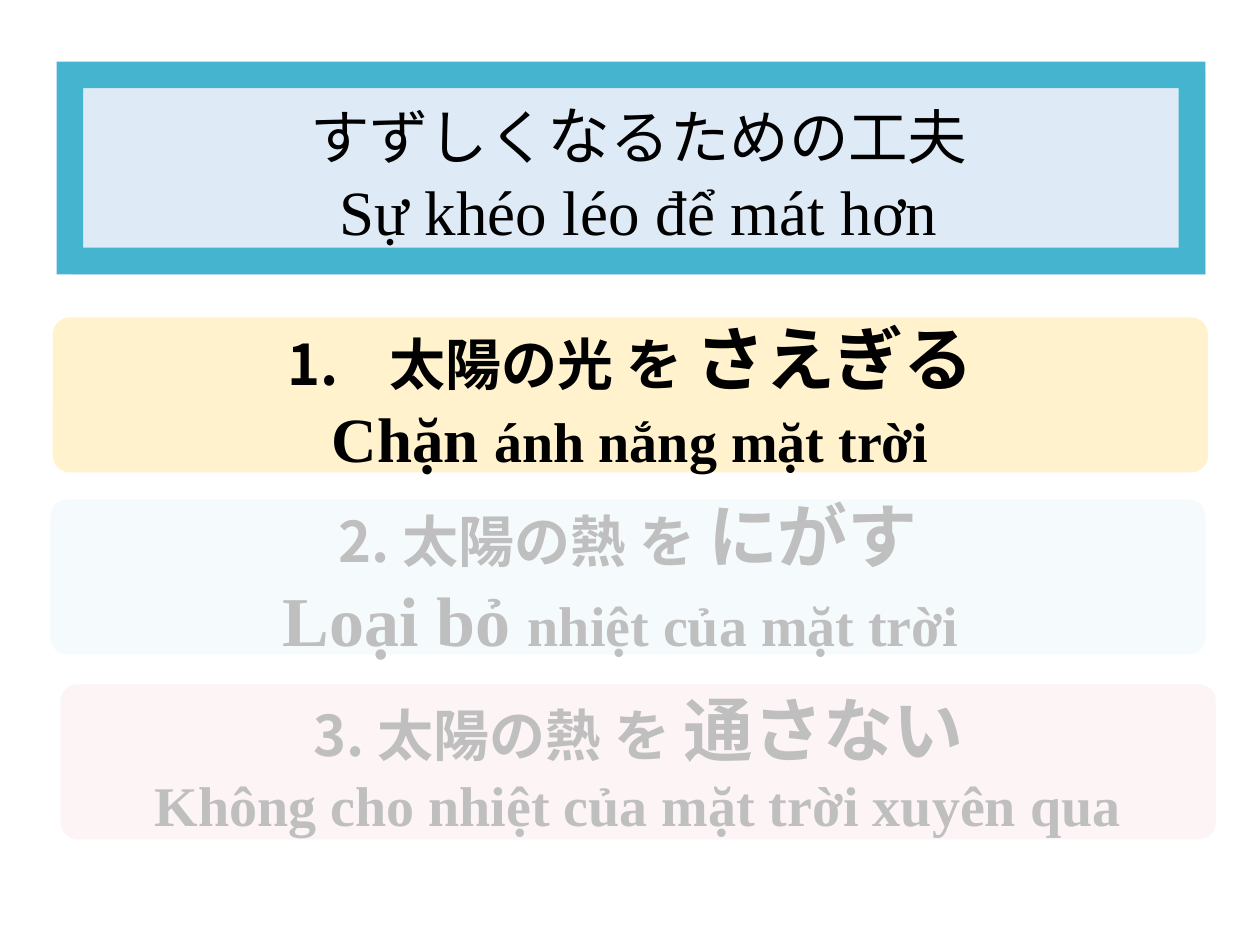
import pptx
import pptx.util
import pptx.dml.color
import pptx.enum.shapes
import pptx.enum.text
import pptx.oxml.ns
from lxml import etree

Pt = pptx.util.Pt
SHAPE = pptx.enum.shapes.MSO_SHAPE
CENTER = pptx.enum.text.PP_ALIGN.CENTER
MIDDLE = pptx.enum.text.MSO_ANCHOR.MIDDLE
qn = pptx.oxml.ns.qn

COLORS = {
    "title": "DEEBF7", "frame": "45B5CF", "text": "000000", "veil": "FFFFFF",
    "block": "FFF2CC", "release": "DAF0F5", "insulate": "F4D4D8",
}
JAPANESE = "Noto Sans CJK JP"
VIETNAMESE = "Times New Roman"


def add_box(kind, left, top, width, height, color):
    shape = slide.shapes.add_shape(kind, Pt(left), Pt(top), Pt(width), Pt(height))
    shape.shadow.inherit = False
    shape.fill.solid()
    shape.fill.fore_color.rgb = pptx.dml.color.RGBColor.from_string(COLORS[color])
    shape.line.fill.background()
    return shape


def write_line(paragraph, runs, font_name, bold):
    paragraph.alignment = CENTER
    paragraph.font.name = font_name
    paragraph.font.bold = bold
    paragraph.font.color.rgb = pptx.dml.color.RGBColor.from_string(COLORS["text"])
    for text, size in runs:
        run = paragraph.add_run()
        run.text = text
        run.font.name = font_name
        run.font.size = Pt(size)
        east_asian = etree.SubElement(run.font._element, qn("a:ea"))
        east_asian.set("typeface", JAPANESE)


presentation = pptx.Presentation()
presentation.slide_width = Pt(720)
presentation.slide_height = Pt(540)
slide = presentation.slides.add_slide(presentation.slide_layouts[5])

# Title with its frame
title = slide.shapes.title
title.left, title.top, title.width, title.height = Pt(41), Pt(40.3), Pt(648), Pt(116.6)
title.fill.solid()
title.fill.fore_color.rgb = pptx.dml.color.RGBColor.from_string(COLORS["title"])
title_frame = title.text_frame
title_frame.auto_size = pptx.enum.text.MSO_AUTO_SIZE.NONE
title_frame.word_wrap = False
title_frame.vertical_anchor = MIDDLE
write_line(title_frame.paragraphs[0],
           [("すずしく", 34), ("な", 36), ("るための工夫", 34)], VIETNAMESE, False)
write_line(title_frame.add_paragraph(), [("Sự khéo léo để mát hơn", 36)], VIETNAMESE, False)
add_box(SHAPE.FRAME, 32.4, 35.2, 656.4, 121.6, "frame")

# Cards: left, top, colour, numbered, Japanese line, Vietnamese line
cards = [
    (30.2, 181.4, "block", True, [("太陽の光 を ", 32), ("さえぎる", 40)],
     [("Chặn ", 36), ("ánh nắng mặt trời", 32)]),
    (34.6, 391, "insulate", False, [("3. 太陽の熱 を ", 32), ("通さない", 40)],
     [("Không cho nhiệt của mặt trời xuyên qua", 32)]),
    (28.8, 285.4, "release", False, [("2. 太陽の熱 を ", 32), ("にがす", 40)],
     [("Loại bỏ ", 40), ("nhiệt của mặt trời ", 32)]),
]
for left, top, color, numbered, japanese, vietnamese in cards:
    card = add_box(SHAPE.ROUNDED_RECTANGLE, left, top, 660.2, 88.6, color)
    card.adjustments[0] = 0.11
    text_frame = card.text_frame
    text_frame.word_wrap = True
    text_frame.vertical_anchor = MIDDLE
    first = text_frame.paragraphs[0]
    if numbered:
        properties = first._p.get_or_add_pPr()
        properties.set("marL", str(Pt(58.5)))
        properties.set("indent", str(-Pt(58.5)))
        etree.SubElement(properties, qn("a:buFont")).set("typeface", JAPANESE)
        etree.SubElement(properties, qn("a:buAutoNum")).set("type", "arabicPeriod")
    write_line(first, japanese, JAPANESE, True)
    write_line(text_frame.add_paragraph(), vietnamese, VIETNAMESE, True)

# Translucent veil over the cards still to come
veil = add_box(SHAPE.RECTANGLE, 8.6, 280, 702.7, 234, "veil")
veil_color = veil._element.spPr.find(qn("a:solidFill")).find(qn("a:srgbClr"))
etree.SubElement(veil_color, qn("a:alpha")).set("val", "75000")

presentation.save("out.pptx")
